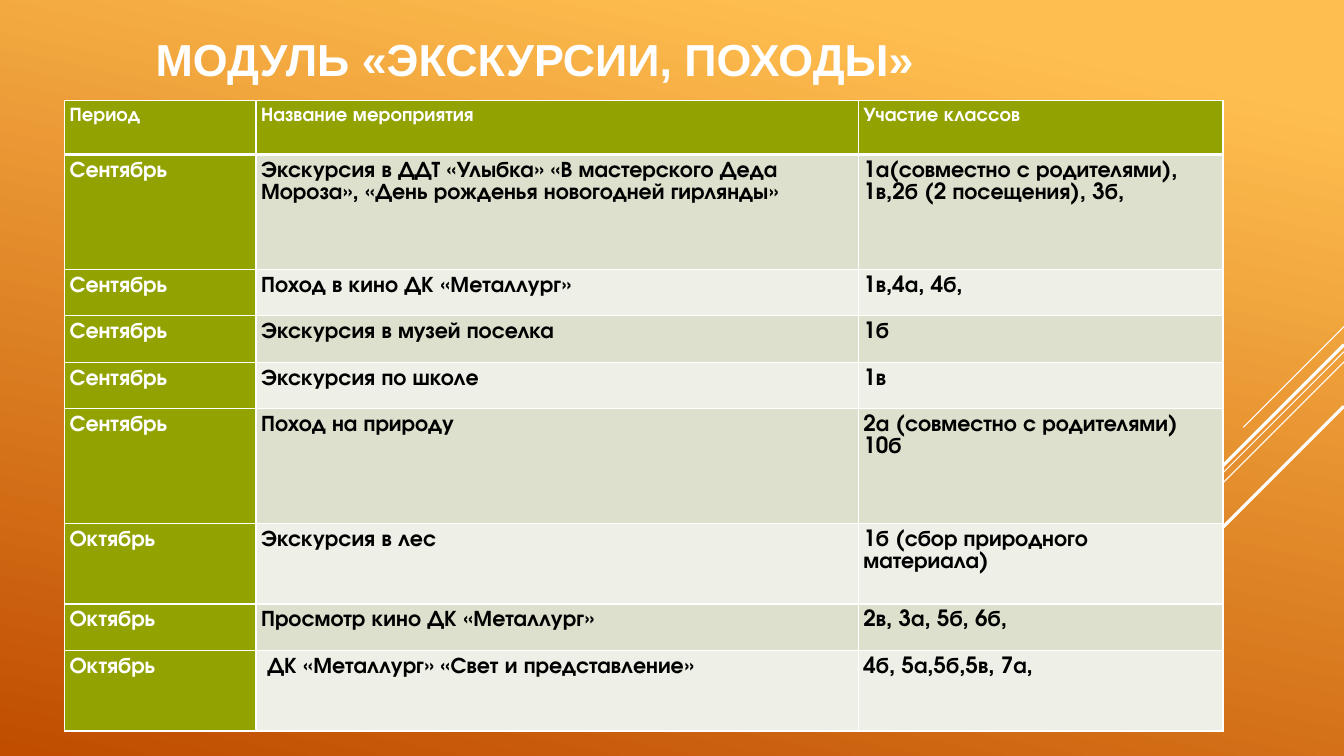
from dataclasses import dataclass

from lxml import etree
from pptx import Presentation
from pptx.dml.color import RGBColor
from pptx.enum.shapes import MSO_CONNECTOR
from pptx.enum.text import MSO_ANCHOR, PP_ALIGN
from pptx.oxml.ns import qn
from pptx.util import Inches, Pt

STRAIGHT = MSO_CONNECTOR.STRAIGHT
MIDDLE = MSO_ANCHOR.MIDDLE
CENTER = PP_ALIGN.CENTER

GRID_COLUMNS, GRID_ROWS = 40, 22.5
CELL = Inches(1) / 3


@dataclass(frozen=True)
class Theme:
    white: str = "FFFFFF"
    black: str = "000000"
    green: str = "92A200"
    bands: tuple = ("DCE0CC", "EEF0E7")
    gradient: tuple = ((0.1, "FFBF50"), (1, "C04D00"))
    gradient_angle: int = 258
    title_font: str = "Arial"
    table_font: str = "TeX Gyre Adventor"
    title_size: int = 32
    header_size: int = 14
    body_size: int = 16
    border: int = 1
    header_border: int = 3
    line_spacing: float = 1.07


THEME = Theme()

TITLE = "МОДУЛЬ «ЭКСКУРСИИ, ПОХОДЫ»"
COLUMN_WIDTHS = (5.7, 17.93, 10.85)
HEADER_HEIGHT = 1.6
HEADER = ("Период", "Название мероприятия", "Участие классов")
# Row height, month, event, classes (one paragraph per line)
EVENTS = (
    (3.42, "Сентябрь",
     "Экскурсия в ДДТ «Улыбка» «В мастерского Деда Мороза», "
     "«День рожденья новогодней гирлянды»",
     "1а(совместно с родителями), 1в,2б (2 посещения), 3б,"),
    (1.38, "Сентябрь", "Поход в кино ДК «Металлург»", "1в,4а, 4б,"),
    (1.38, "Сентябрь", "Экскурсия в музей поселка", "1б"),
    (1.38, "Сентябрь", "Экскурсия по школе", "1в"),
    (3.42, "Сентябрь", "Поход на природу", "2а (совместно с родителями)\n10б"),
    (2.4, "Октябрь", "Экскурсия в лес", "1б (сбор природного материала)"),
    (1.38, "Октябрь", "Просмотр кино ДК «Металлург»", "2в, 3а, 5б, 6б,"),
    (2.4, "Октябрь", " ДК «Металлург» «Свет и представление»", "4б, 5а,5б,5в, 7а,"),
)
# Start row at the right edge, length in grid cells, line width
DIAGONALS = (
    (9.72, 3, 0.75),
    (10.47, 9.78, 0.75),
    (10.77, 6.22, 0.75),
    (10.26, 5.73, 2.25),
    (12.09, 4.17, 2.25),
)


def grid(cells):
    return round(cells * CELL)


def color(value):
    return RGBColor.from_string(value)


def add_run(paragraph, text, font, size, fill):
    run = paragraph.add_run()
    run.text = text
    run.font.name = font
    run.font.size = Pt(size)
    run.font.bold = True
    run.font.color.rgb = color(fill)


def paint_background(slide):
    fill = slide.background.fill
    fill.gradient()
    fill.gradient_angle = THEME.gradient_angle
    for stop, (position, value) in zip(fill.gradient_stops, THEME.gradient):
        stop.position = position
        stop.color.rgb = color(value)


def add_diagonal(slide, row, length, width):
    """Draw a 45° line down and left from the slide's right edge."""
    line = slide.shapes.add_connector(
        STRAIGHT, grid(GRID_COLUMNS), grid(row),
        grid(GRID_COLUMNS - length), grid(row + length))
    line.line.color.rgb = color(THEME.white)
    line.line.width = Pt(width)
    etree.SubElement(line._element.spPr, qn("a:effectLst"))


def add_title(slide):
    box = slide.shapes.add_textbox(grid(1.92), 0, grid(28), grid(4.95))
    frame = box.text_frame
    frame.word_wrap = True
    frame.vertical_anchor = MIDDLE
    frame.margin_bottom = grid(1.6)
    paragraph = frame.paragraphs[0]
    paragraph.alignment = CENTER
    add_run(paragraph, TITLE, THEME.title_font, THEME.title_size, THEME.white)


def set_borders(cell, top, bottom):
    properties = cell._tc.get_or_add_tcPr()
    widths = {"L": THEME.border, "R": THEME.border, "T": top, "B": bottom}
    for side, width in widths.items():
        line = etree.SubElement(properties, qn(f"a:ln{side}"), w=str(Pt(width)))
        fill = etree.SubElement(line, qn("a:solidFill"))
        etree.SubElement(fill, qn("a:srgbClr"), val=THEME.white)


def fill_cell(cell, text, size, text_color, background):
    cell.margin_left = cell.margin_right = Inches(0.05)
    cell.margin_top = cell.margin_bottom = Inches(0.05)
    cell.fill.solid()
    cell.fill.fore_color.rgb = color(background)
    frame = cell.text_frame
    for index, line in enumerate(text.split("\n")):
        paragraph = frame.add_paragraph() if index else frame.paragraphs[0]
        paragraph.line_spacing = THEME.line_spacing
        add_run(paragraph, line, THEME.table_font, size, text_color)


def add_events_table(slide):
    rows = ((HEADER_HEIGHT, *HEADER), *EVENTS)
    table = slide.shapes.add_table(
        len(rows), len(HEADER), grid(1.92), grid(3),
        grid(sum(COLUMN_WIDTHS)), grid(sum(row[0] for row in rows))).table
    table.horz_banding = False
    for column, width in zip(table.columns, COLUMN_WIDTHS):
        column.width = grid(width)
    for row_index, (height, *texts) in enumerate(rows):
        table.rows[row_index].height = grid(height)
        is_header = row_index == 0
        size = THEME.header_size if is_header else THEME.body_size
        top = THEME.header_border if row_index == 1 else THEME.border
        bottom = THEME.header_border if is_header else THEME.border
        for column_index, text in enumerate(texts):
            cell = table.cell(row_index, column_index)
            set_borders(cell, top, bottom)
            if is_header or column_index == 0:
                fill_cell(cell, text, size, THEME.white, THEME.green)
            else:
                band = THEME.bands[(row_index - 1) % 2]
                fill_cell(cell, text, size, THEME.black, band)


def main():
    presentation = Presentation()
    presentation.slide_width = grid(GRID_COLUMNS)
    presentation.slide_height = grid(GRID_ROWS)
    slide = presentation.slides.add_slide(presentation.slide_layouts[6])
    paint_background(slide)
    for diagonal in DIAGONALS:
        add_diagonal(slide, *diagonal)
    add_title(slide)
    add_events_table(slide)
    presentation.save("out.pptx")


if __name__ == "__main__":
    main()
